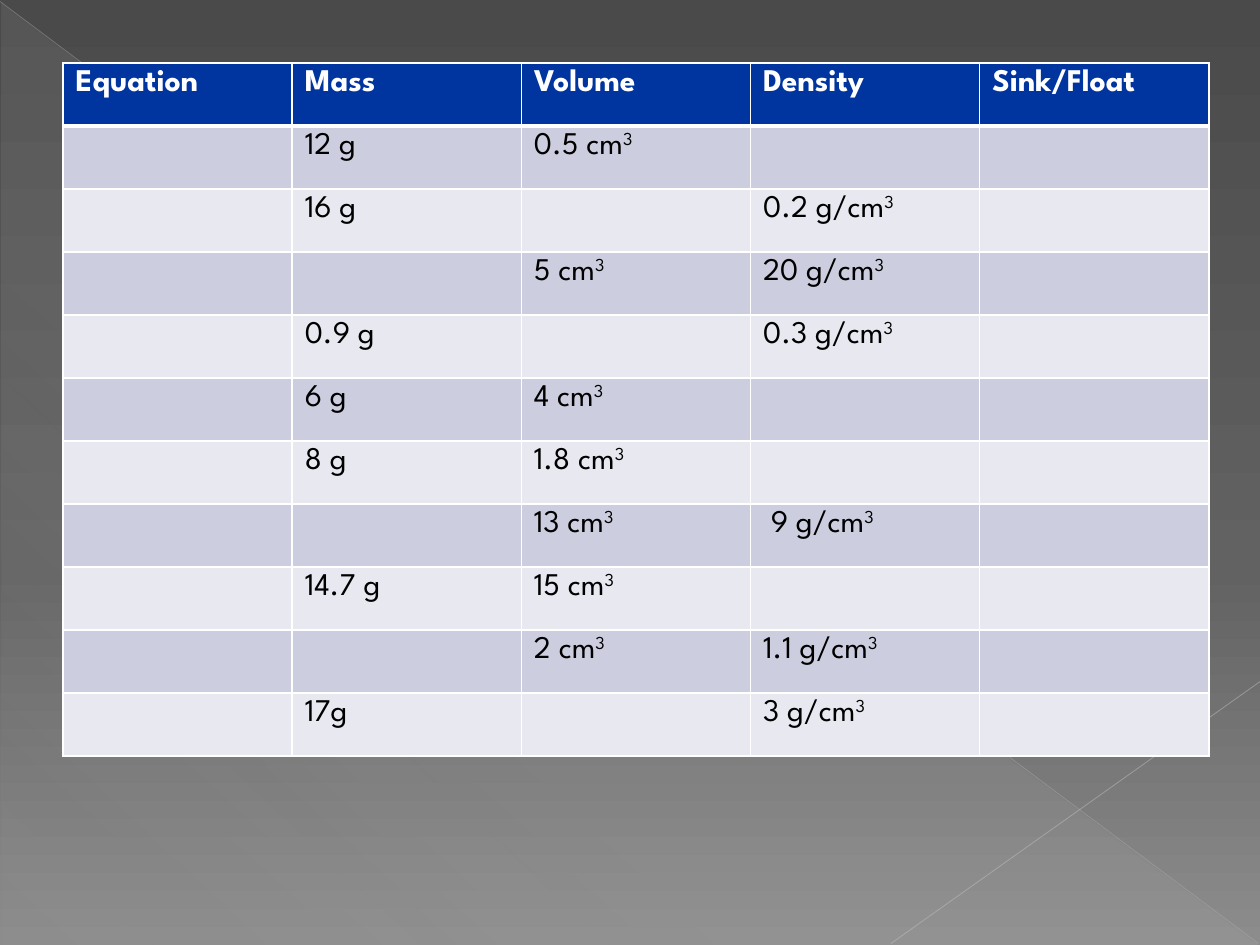
from lxml import etree
from pptx import Presentation
from pptx.dml.color import RGBColor
from pptx.enum.shapes import MSO_CONNECTOR, MSO_SHAPE
from pptx.oxml.ns import qn
from pptx.util import Cm, Pt

STRAIGHT = MSO_CONNECTOR.STRAIGHT
RIGHT_TRIANGLE = MSO_SHAPE.RIGHT_TRIANGLE

FONT = "League Spartan"
WHITE = RGBColor(0xFF, 0xFF, 0xFF)
BLACK = RGBColor(0x00, 0x00, 0x00)
HEADER_BLUE = RGBColor(0x00, 0x34, 0x9E)
BAND_DARK = RGBColor(0xCC, 0xCE, 0xDF)
BAND_LIGHT = RGBColor(0xE7, 0xE8, 0xF0)
BG_TOP = RGBColor(0x4A, 0x4A, 0x4A)
BG_MIDDLE = RGBColor(0x62, 0x62, 0x62)
BG_BOTTOM = RGBColor(0x8C, 0x8C, 0x8C)
SHEEN = RGBColor(0xD2, 0xD2, 0xD2)
DIAGONAL_GREY = RGBColor(0xBF, 0xBF, 0xBF)
CORNER_GREY = RGBColor(0xC6, 0xC6, 0xC6)

ROWS = [
    ("Equation", "Mass", "Volume", "Density", "Sink/Float"),
    ("", "12 g", "0.5 cm³", "", ""),
    ("", "16 g", "", "0.2 g/cm³", ""),
    ("", "", "5 cm³", "20 g/cm³", ""),
    ("", "0.9 g", "", "0.3 g/cm³", ""),
    ("", "6 g", "4 cm³", "", ""),
    ("", "8 g", "1.8 cm³", "", ""),
    ("", "", "13 cm³", " 9 g/cm³", ""),
    ("", "14.7 g", "15 cm³", "", ""),
    ("", "", "2 cm³", "1.1 g/cm³", ""),
    ("", "17g", "", "3 g/cm³", ""),
]
COLUMN_WIDTH = Cm(4.62)
ROW_HEIGHT = Cm(1.27)


def add_color(parent, color, opacity=100):
    clr = etree.SubElement(parent, qn("a:srgbClr"), val=str(color))
    if opacity < 100:
        etree.SubElement(clr, qn("a:alpha"), val=str(opacity * 1000))


def set_gradient(fill, owner, stops, angle):
    fill.gradient()
    grad = next(owner.iter(qn("a:gradFill")))
    for child in list(grad):
        grad.remove(child)
    stop_list = etree.SubElement(grad, qn("a:gsLst"))
    for position, color, opacity in stops:
        stop = etree.SubElement(stop_list, qn("a:gs"), pos=str(position * 1000))
        add_color(stop, color, opacity)
    etree.SubElement(grad, qn("a:lin"), ang=str(angle * 60000), scaled="0")


def add_sheen(slide, left, top, width, height):
    sp = slide.shapes.add_shape(RIGHT_TRIANGLE, left, top, width, height)
    sp.shadow.inherit = False
    sp.line.fill.background()
    stops = [(0, SHEEN, 10), (70, SHEEN, 8), (100, SHEEN, 1)]
    set_gradient(sp.fill, sp.element, stops, 133)


def add_line(slide, start, end, color, width, opacity):
    line = slide.shapes.add_connector(STRAIGHT, *start, *end)
    line.line.width = Pt(width)
    line.line.fill.solid()
    solid = line.element.spPr.find(qn("a:ln")).find(qn("a:solidFill"))
    for child in list(solid):
        solid.remove(child)
    add_color(solid, color, opacity)
    etree.SubElement(line.element.spPr, qn("a:effectLst"))


def set_borders(cell, top, bottom):
    tc_pr = cell._tc.get_or_add_tcPr()
    widths = {"a:lnL": 1, "a:lnR": 1, "a:lnT": top, "a:lnB": bottom}
    for index, (tag, width) in enumerate(widths.items()):
        ln = etree.Element(qn(tag), w=str(Pt(width)))
        add_color(etree.SubElement(ln, qn("a:solidFill")), WHITE)
        tc_pr.insert(index, ln)


def write_cell(cell, text, color, bold):
    p = cell.text_frame.paragraphs[0]
    p.font.name = FONT
    p.font.size = Pt(18)
    p.font.bold = bold
    p.font.color.rgb = color
    base, cube, _ = text.partition("³")
    if base:
        p.add_run().text = base
    if cube:
        r = p.add_run()
        r.text = "3"
        r.font._element.set("baseline", "30000")


def add_density_table(slide, left, top):
    columns = len(ROWS[0])
    table = slide.shapes.add_table(
        len(ROWS), columns, left, top, COLUMN_WIDTH * columns, ROW_HEIGHT * len(ROWS)
    ).table
    for column in table.columns:
        column.width = COLUMN_WIDTH
    for i, texts in enumerate(ROWS):
        table.rows[i].height = ROW_HEIGHT
        header = i == 0
        band = HEADER_BLUE if header else BAND_DARK if i % 2 else BAND_LIGHT
        for j, text in enumerate(texts):
            cell = table.cell(i, j)
            cell.fill.solid()
            cell.fill.fore_color.rgb = band
            set_borders(cell, 3 if i == 1 else 1, 3 if header else 1)
            write_cell(cell, text, WHITE if header else BLACK, header)


def main():
    prs = Presentation()
    prs.slide_width, prs.slide_height = Cm(25.4), Cm(19.05)
    slide = prs.slides.add_slide(prs.slide_layouts[6])
    stops = [(0, BG_TOP, 100), (60, BG_MIDDLE, 100), (100, BG_BOTTOM, 100)]
    set_gradient(slide.background.fill, slide.element, stops, 90)
    add_sheen(slide, Cm(0.03), Cm(0.05), Cm(25.35), Cm(19))
    add_line(slide, (Cm(0), Cm(0.03)), (Cm(25.37), Cm(19.02)), DIAGONAL_GREY, 0.39, 35)
    add_line(slide, (Cm(25.4), Cm(13.74)), (Cm(17.96), Cm(19.02)), CORNER_GREY, 0.47, 45)
    add_density_table(slide, Cm(1.27), Cm(1.27))
    prs.save("out.pptx")


if __name__ == "__main__":
    main()
